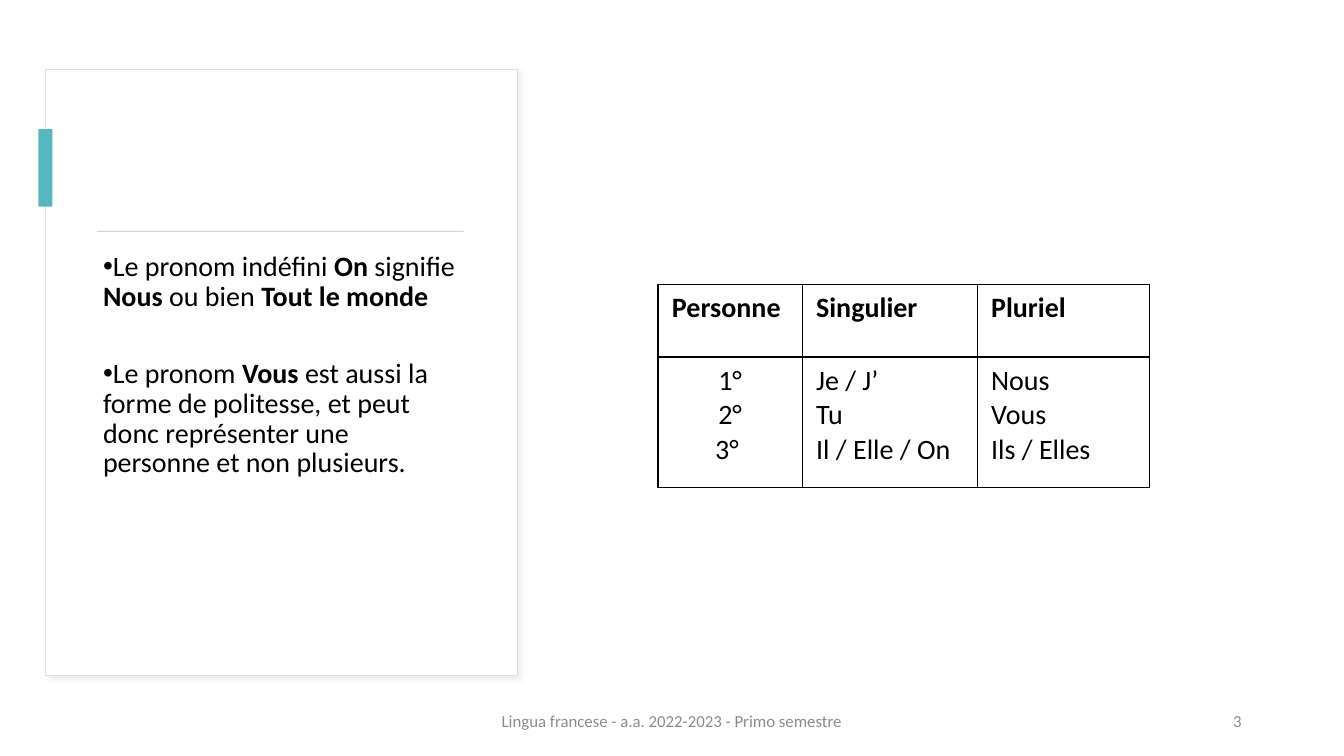
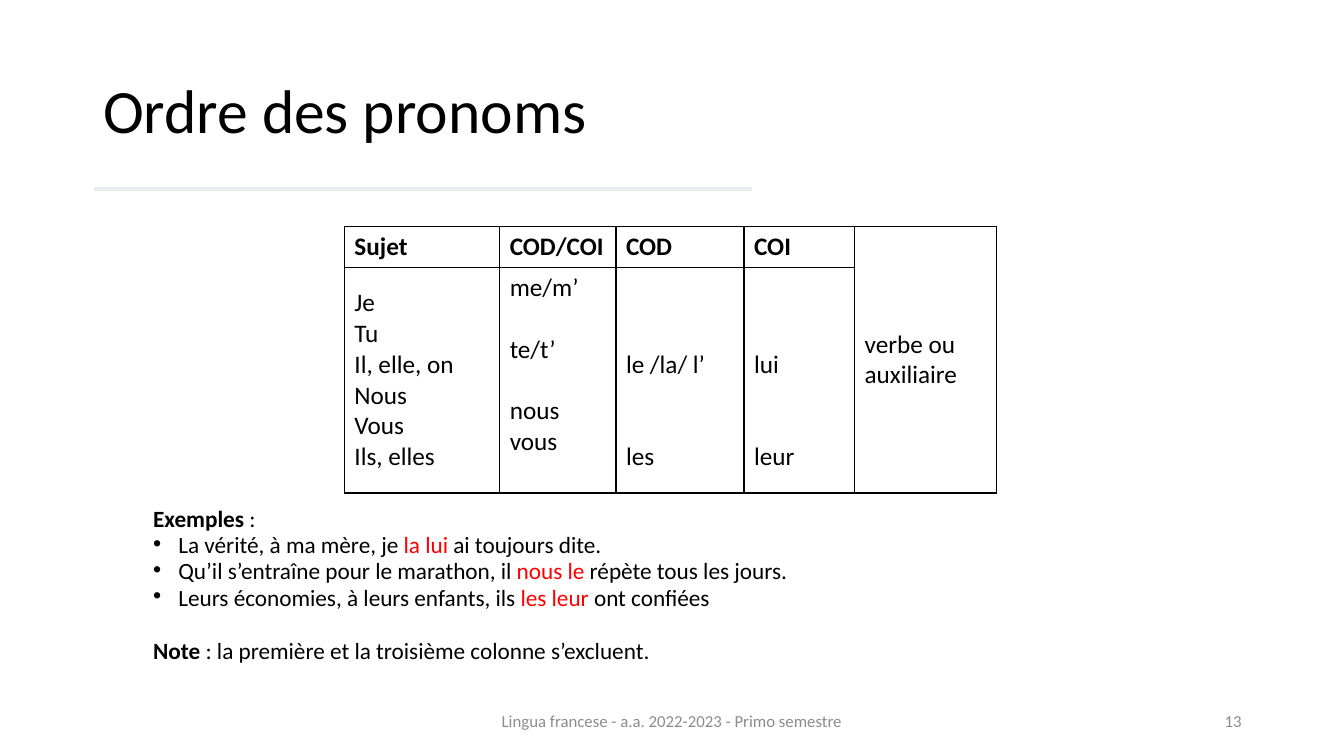
from dataclasses import dataclass
from typing import Any

from lxml.etree import SubElement
from pptx import Presentation
from pptx.dml.color import RGBColor
from pptx.enum.shapes import MSO_CONNECTOR, MSO_SHAPE
from pptx.enum.text import MSO_ANCHOR, MSO_AUTO_SIZE, PP_ALIGN
from pptx.oxml.ns import qn
from pptx.util import Pt

BLACK = RGBColor(0x00, 0x00, 0x00)
WHITE = RGBColor(0xFF, 0xFF, 0xFF)
RED = RGBColor(0xFF, 0x00, 0x00)
GREY = RGBColor(0x8C, 0x8C, 0x8C)
TEAL = RGBColor(0x58, 0xB6, 0xC0)
CARD_EDGE = RGBColor(0xDE, 0xDE, 0xDE)
CARD_SHADOW = RGBColor(0xD9, 0xD9, 0xD9)
DIVIDER = RGBColor(0xD5, 0xD5, 0xD5)
TITLE_RULE = RGBColor(0xE6, 0xEE, 0xF0)

FONT = "Calibri"
FOOTER = "Lingua francese - a.a. 2022-2023 - Primo semestre"
LINE_18 = 21.97  # height of one 18 pt line
Box = tuple[float, float, float, float]


@dataclass(frozen=True)
class Run:
    text: str
    bold: bool = False
    color: RGBColor = BLACK


@dataclass(frozen=True)
class Line:
    runs: tuple[Run, ...]
    before: float = 0
    bullet: bool = False


@dataclass(frozen=True)
class TextStyle:
    size: float
    spacing: float = 1.0
    align: PP_ALIGN = PP_ALIGN.LEFT
    hang: float = 0


@dataclass(frozen=True)
class Cell:
    lines: tuple[Line, ...]
    anchor: MSO_ANCHOR = MSO_ANCHOR.TOP
    top: float | None = None
    align: PP_ALIGN = PP_ALIGN.LEFT


@dataclass(frozen=True)
class Grid:
    left: float
    top: float
    cols: tuple[float, ...]
    rows: tuple[float, ...]
    size: float
    pad: tuple[float, float]
    cells: tuple[tuple[Cell, ...], ...]


@dataclass(frozen=True)
class Block:
    box: Box
    fill: RGBColor
    edge: RGBColor | None = None


def apply(obj: Any, formats: dict[str, Any]) -> None:
    for name, value in formats.items():
        setattr(obj, name, value)


def place(sp: Any, box: Box) -> None:
    apply(sp, dict(zip(("left", "top", "width", "height"), map(Pt, box))))


def line(text: str, before: float = 0, bold: bool = False) -> Line:
    return Line((Run(text, bold),), before)


def lines(*texts: str) -> tuple[Line, ...]:
    return tuple(line(text) for text in texts)


def set_bullet(p: Any, hang: float) -> None:
    pPr = p._p.get_or_add_pPr()
    pPr.set("marL", str(Pt(hang)))
    pPr.set("indent", str(-Pt(hang)))
    SubElement(pPr, qn("a:buFont"), typeface="Arial")
    SubElement(pPr, qn("a:buChar"), char="•")


def set_no_bullet(p: Any) -> None:
    pPr = p._p.get_or_add_pPr()
    pPr.set("marL", "0")
    pPr.set("indent", "0")
    SubElement(pPr, qn("a:buNone"))


def write(tf: Any, content: tuple[Line, ...], style: TextStyle) -> None:
    for i, item in enumerate(content):
        p = tf.paragraphs[0] if i == 0 else tf.add_paragraph()
        apply(p, {"alignment": style.align, "line_spacing": style.spacing,
                  "space_before": Pt(item.before), "space_after": Pt(0)})
        if item.bullet:
            set_bullet(p, style.hang)
        else:
            set_no_bullet(p)
        for part in item.runs:
            r = p.add_run()
            r.text = part.text
            apply(r.font, {"name": FONT, "size": Pt(style.size), "bold": part.bold})
            r.font.color.rgb = part.color


def fill_text(sp: Any, box: Box, content: tuple[Line, ...], style: TextStyle,
              anchor: MSO_ANCHOR = MSO_ANCHOR.TOP) -> None:
    place(sp, box)
    tf = sp.text_frame
    apply(tf, {"word_wrap": True, "auto_size": MSO_AUTO_SIZE.NONE, "vertical_anchor": anchor})
    write(tf, content, style)


def add_block(slide: Any, block: Block) -> Any:
    sp = slide.shapes.add_shape(MSO_SHAPE.RECTANGLE, *map(Pt, block.box))
    sp.shadow.inherit = False
    sp.fill.solid()
    sp.fill.fore_color.rgb = block.fill
    if block.edge is None:
        sp.line.fill.background()
    else:
        sp.line.color.rgb = block.edge
        sp.line.width = Pt(0.75)
    return sp


def add_shadow(sp: Any) -> None:
    effects = sp._element.spPr.find(qn("a:effectLst"))
    shadow = SubElement(effects, qn("a:outerShdw"), blurRad=str(Pt(4)), dist=str(Pt(3)),
                        dir="2700000", algn="tl", rotWithShape="0")
    color = SubElement(shadow, qn("a:srgbClr"), val=str(CARD_SHADOW))
    SubElement(color, qn("a:alpha"), val="50000")


def add_rule(slide: Any, left: float, right: float, y: float) -> None:
    cn = slide.shapes.add_connector(MSO_CONNECTOR.STRAIGHT, Pt(left), Pt(y), Pt(right), Pt(y))
    cn.line.color.rgb = TITLE_RULE
    cn.line.width = Pt(3)
    SubElement(cn._element.spPr, qn("a:effectLst"))


def set_borders(cell: Any) -> None:
    tcPr = cell._tc.get_or_add_tcPr()
    for side in ("lnL", "lnR", "lnT", "lnB"):
        ln = SubElement(tcPr, qn(f"a:{side}"), w=str(Pt(1)))
        SubElement(SubElement(ln, qn("a:solidFill")), qn("a:srgbClr"), val=str(BLACK))


def add_grid(slide: Any, grid: Grid) -> Any:
    frame = slide.shapes.add_table(len(grid.rows), len(grid.cols), Pt(grid.left), Pt(grid.top),
                                   Pt(sum(grid.cols)), Pt(sum(grid.rows)))
    table = frame.table
    apply(table, {"first_row": False, "horz_banding": False})
    for col, width in zip(table.columns, grid.cols):
        col.width = Pt(width)
    for row, height in zip(table.rows, grid.rows):
        row.height = Pt(height)
    for cell in table.iter_cells():
        set_borders(cell)
        cell.fill.solid()
        cell.fill.fore_color.rgb = WHITE
    side, top = grid.pad
    for r, row in enumerate(grid.cells):
        for c, item in enumerate(row):
            cell = table.cell(r, c)
            cell_top = top if item.top is None else item.top
            apply(cell, {"margin_left": Pt(side), "margin_right": Pt(side),
                         "margin_top": Pt(cell_top), "margin_bottom": Pt(top),
                         "vertical_anchor": item.anchor})
            write(cell.text_frame, item.lines, TextStyle(grid.size, align=item.align))
    return table


def add_footer(slide: Any, number: int) -> None:
    for text, left, width, align in ((FOOTER, 318, 324, PP_ALIGN.CENTER),
                                     (str(number), 678, 216, PP_ALIGN.RIGHT)):
        fill_text(slide.shapes.add_textbox(0, 0, 0, 0), (left, 500.5, width, 28.75),
                  (Line((Run(text, color=GREY),)),), TextStyle(12, align=align),
                  MSO_ANCHOR.MIDDLE)


def header(*names: str, anchor: MSO_ANCHOR = MSO_ANCHOR.TOP) -> tuple[Cell, ...]:
    return tuple(Cell((line(name, bold=True),), anchor) for name in names)


def example(start: str, pronouns: str, end: str) -> Line:
    return Line((Run(start), Run(pronouns, color=RED), Run(end)), 4.75, True)


def build_subject_pronouns(prs: Any) -> None:
    slide = prs.slides.add_slide(prs.slide_layouts[1])
    title, body = slide.placeholders
    title._element.getparent().remove(title._element)

    # Card with accent and divider, placed behind the text
    card = add_block(slide, Block((32.4, 49.7, 337, 432.7), WHITE, CARD_EDGE))
    add_shadow(card)
    add_block(slide, Block((27.4, 92.2, 10, 55.5), TEAL))
    add_block(slide, Block((69.2, 164.9, 262, 0.75), DIVIDER))
    slide.shapes._spTree.append(body._element)

    # Remarks
    remarks = (
        Line((Run("Le pronom indéfini "), Run("On", True), Run(" signifie "), Run("Nous", True),
              Run(" ou bien "), Run("Tout le monde", True)), bullet=True),
        Line((Run("Le pronom "), Run("Vous", True),
              Run(" est aussi la forme de politesse, et peut donc représenter "
                  "une personne et non plusieurs.")), 34.3, True),
    )
    fill_text(body, (66.4, 177.2, 268.6, 280), remarks, TextStyle(20, 0.88))

    # Table of persons
    add_grid(slide, Grid(470, 203, (103, 125, 123), (52, 93), 20, (10, 5), (
        header("Personne", "Singulier", "Pluriel"),
        (Cell(lines("1°", "2°", "3° "), align=PP_ALIGN.CENTER),
         Cell(lines("Je / J’", "Tu", "Il / Elle / On")),
         Cell(lines("Nous", "Vous", "Ils / Elles"))),
    )))
    add_footer(slide, 3)


def build_pronoun_order(prs: Any) -> None:
    slide = prs.slides.add_slide(prs.slide_layouts[1])
    title, body = slide.placeholders
    fill_text(title, (66.4, 28.8, 828, 104.4), lines("Ordre des pronoms"),
              TextStyle(44, 0.9), MSO_ANCHOR.MIDDLE)
    add_rule(slide, 67, 537, 134.9)

    # Examples and note
    examples = (
        Line((Run("Exemples", True), Run(" :"))),
        example("La vérité, à ma mère, je ", "la lui ", "ai toujours dite."),
        example("Qu’il s’entraîne pour le marathon, il ", "nous le ",
                "répète tous les jours."),
        example("Leurs économies, à leurs enfants, ils ", "les leur ", "ont confiées"),
        Line((Run("Note", True),
              Run(" : la première et la troisième colonne s’excluent.")), 24.2),
    )
    fill_text(body, (102.2, 362, 792, 125), examples, TextStyle(16.6, 0.7, hang=18))

    # Table of pronoun order: gaps line objects up with their subjects
    middle = MSO_ANCHOR.MIDDLE
    objects = tuple(Cell((line(one), line(many, 2 * LINE_18)), top=58.5)
                    for one, many in (("le /la/ l’", "les"), ("lui", "leur")))
    table = add_grid(slide, Grid(246, 162, (111, 83, 91.5, 79, 101.5), (29.2, 161), 18,
                                 (7.2, 3.6), (
        header("Sujet", "COD/COI", "COD", "COI", anchor=middle)
        + (Cell(lines("verbe ou", "auxiliaire"), middle),),
        (Cell(lines("Je", "Tu", "Il, elle, on", "Nous", "Vous", "Ils, elles"), top=14.5),
         Cell((line("me/m’"), line("te/t’", LINE_18), line("nous", LINE_18), line("vous"))),
         *objects),
    )))
    table.cell(0, 4).merge(table.cell(1, 4))
    add_footer(slide, 13)


def main() -> None:
    prs = Presentation()
    apply(prs, {"slide_width": Pt(960), "slide_height": Pt(540)})
    build_subject_pronouns(prs)
    build_pronoun_order(prs)
    prs.save("out.pptx")


if __name__ == "__main__":
    main()
